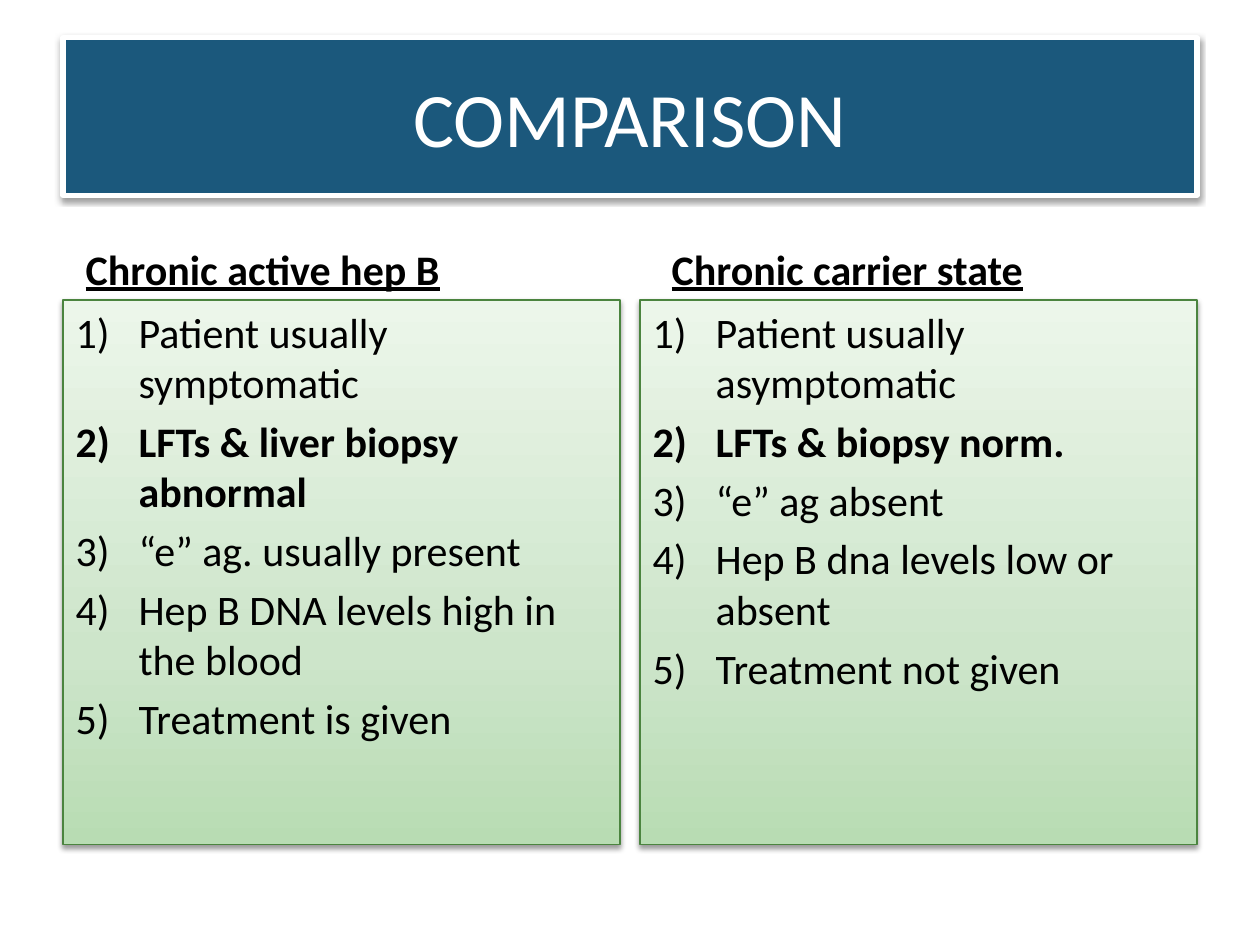
from copy import deepcopy

from lxml import etree
from pptx import Presentation
from pptx.dml.color import RGBColor
from pptx.enum.text import MSO_ANCHOR, MSO_AUTO_SIZE, PP_ALIGN
from pptx.oxml.ns import qn
from pptx.util import Inches, Pt

CENTER, LEFT = PP_ALIGN.CENTER, PP_ALIGN.LEFT
TOP, MIDDLE, BOTTOM = MSO_ANCHOR.TOP, MSO_ANCHOR.MIDDLE, MSO_ANCHOR.BOTTOM
NO_FIT = MSO_AUTO_SIZE.NONE
FONT = "Calibri"
PANEL_STOPS = [(0, "B8DCB3"), (0.35, "CDE5CA"), (1, "ECF6EA")]
COLUMNS = [
    ("Chronic active hep B", 0.18, [
        "Patient usually symptomatic",
        "LFTs & liver biopsy abnormal",
        "“e” ag. usually present",
        "Hep B DNA levels high in the blood",
        "Treatment is given",
    ]),
    ("Chronic carrier state", 0.25, [
        "Patient usually asymptomatic",
        "LFTs & biopsy norm.",
        "“e” ag absent",
        "Hep B dna levels low or absent",
        "Treatment not given",
    ]),
]
BOLD_ITEM = 1


def color(hex_code):
    """Turn a hex string into a colour."""
    return RGBColor.from_string(hex_code)


def place(shape, box, anchor):
    """Move a placeholder to a box in inches and fix its text frame."""
    shape.left, shape.top, shape.width, shape.height = map(Inches, box)
    frame = shape.text_frame
    frame.word_wrap = True
    frame.auto_size = NO_FIT
    frame.vertical_anchor = anchor


def format_para(para, size, hex_code, align=LEFT, bold=False, underline=False):
    """Set the alignment and font of one paragraph."""
    para.alignment = align
    for span in para.runs:
        font = span.font
        font.name, font.size = FONT, Pt(size)
        font.bold, font.underline = bold, underline
        font.color.rgb = color(hex_code)


def set_border(shape, hex_code, width):
    """Outline a shape and give it a soft shadow below."""
    shape.line.color.rgb = color(hex_code)
    shape.line.width = Pt(width)
    effects = etree.SubElement(shape._element.spPr, qn("a:effectLst"))
    shadow = etree.SubElement(effects, qn("a:outerShdw"), blurRad="40000",
                              dist="20000", dir="5400000", rotWithShape="0")
    black = etree.SubElement(shadow, qn("a:srgbClr"), val="000000")
    etree.SubElement(black, qn("a:alpha"), val="38000")


def fill_gradient(shape, stops):
    """Fill a shape with a gradient that runs from bottom to top."""
    fill = shape.fill
    fill.gradient()
    fill.gradient_angle = 90
    stop_list = shape._element.spPr.find(".//" + qn("a:gsLst"))
    while len(stop_list) < len(stops):
        stop_list.append(deepcopy(stop_list[0]))
    for stop, (position, hex_code) in zip(fill.gradient_stops, stops):
        stop.position = position
        stop.color.rgb = color(hex_code)


def number_para(para):
    """Number a paragraph as 1), 2) with a hanging indent."""
    props = para._p.get_or_add_pPr()
    indent = Inches(0.5)
    props.set("marL", str(indent))
    props.set("indent", str(-indent))
    etree.SubElement(props, qn("a:buFont"), typeface="+mj-lt")
    etree.SubElement(props, qn("a:buAutoNum"), type="arabicParenR")


def add_title(shape, box, text):
    """Build the title banner."""
    place(shape, box, MIDDLE)
    shape.fill.solid()
    shape.fill.fore_color.rgb = color("1B587C")
    set_border(shape, "FFFFFF", 3)
    shape.text_frame.text = text
    format_para(shape.text_frame.paragraphs[0], 44, "FFFFFF", CENTER)


def add_heading(shape, box, text, inset):
    """Build the underlined heading of a column."""
    place(shape, box, BOTTOM)
    shape.text_frame.margin_left = Inches(inset)
    shape.text_frame.text = text
    format_para(shape.text_frame.paragraphs[0], 24, "000000", bold=True, underline=True)


def add_panel(shape, box, items):
    """Build the numbered list on its green panel."""
    place(shape, box, TOP)
    fill_gradient(shape, PANEL_STOPS)
    set_border(shape, "4B843F", 0.75)
    shape.text_frame.text = "\n".join(items)
    for index, para in enumerate(shape.text_frame.paragraphs):
        format_para(para, 24, "000000", bold=index == BOLD_ITEM)
        number_para(para)


def add_column(heading, panel, box, content):
    """Build one column: a heading above a panel."""
    left, top, width, height = box
    text, inset, items = content
    heading_height = 0.7
    add_heading(heading, (left, top, width, heading_height), text, inset)
    add_panel(panel, (left, top + heading_height, width, height - heading_height), items)


def main():
    """Build the comparison slide and save the deck."""
    deck = Presentation()
    deck.slide_width, deck.slide_height = Inches(10), Inches(7.5)
    page = deck.slides.add_slide(deck.slide_layouts.get_by_name("Comparison"))
    title, *bodies = page.placeholders
    add_title(title, (0.5, 0.3, 9, 1.25), "COMPARISON")
    width, gap = 4.42, 0.16
    for index, content in enumerate(COLUMNS):
        heading, panel = bodies[2 * index:2 * index + 2]
        left = 0.5 + index * (width + gap)
        add_column(heading, panel, (left, 1.68, width, 5.02), content)
    deck.save("out.pptx")


if __name__ == "__main__":
    main()
